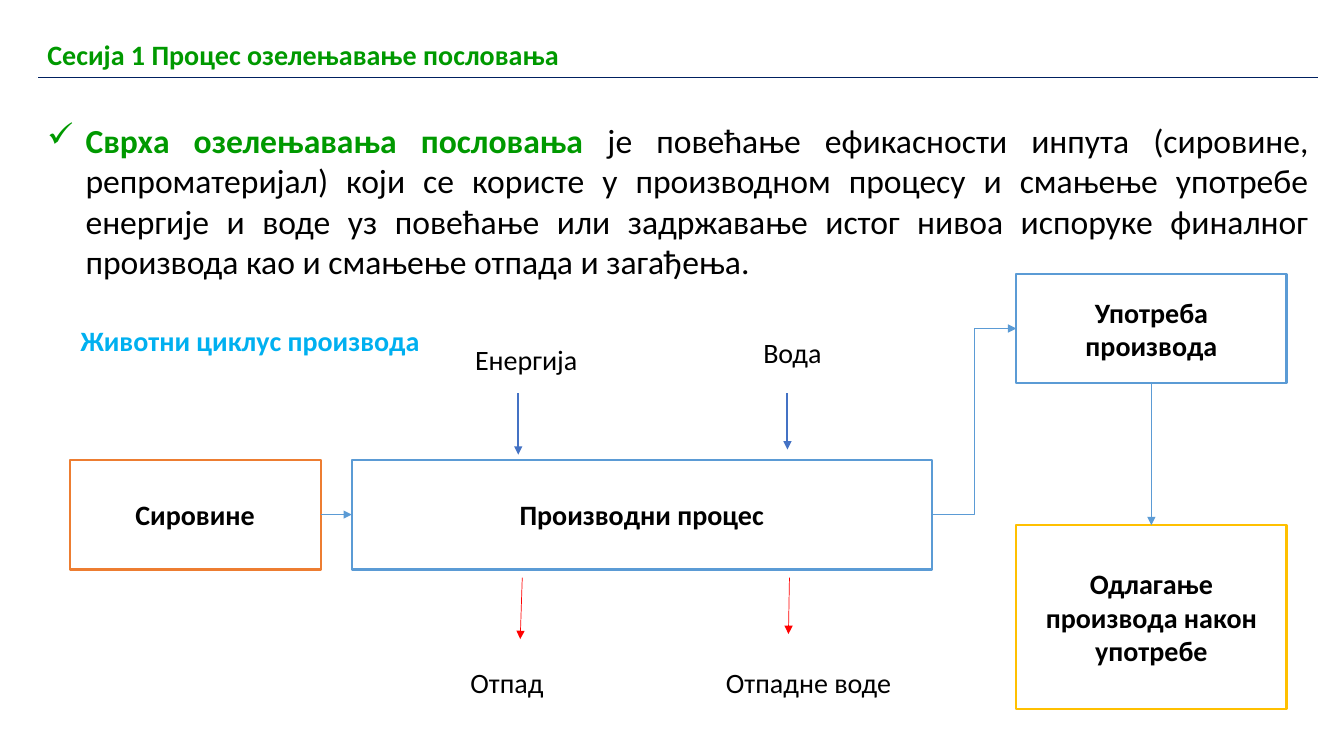
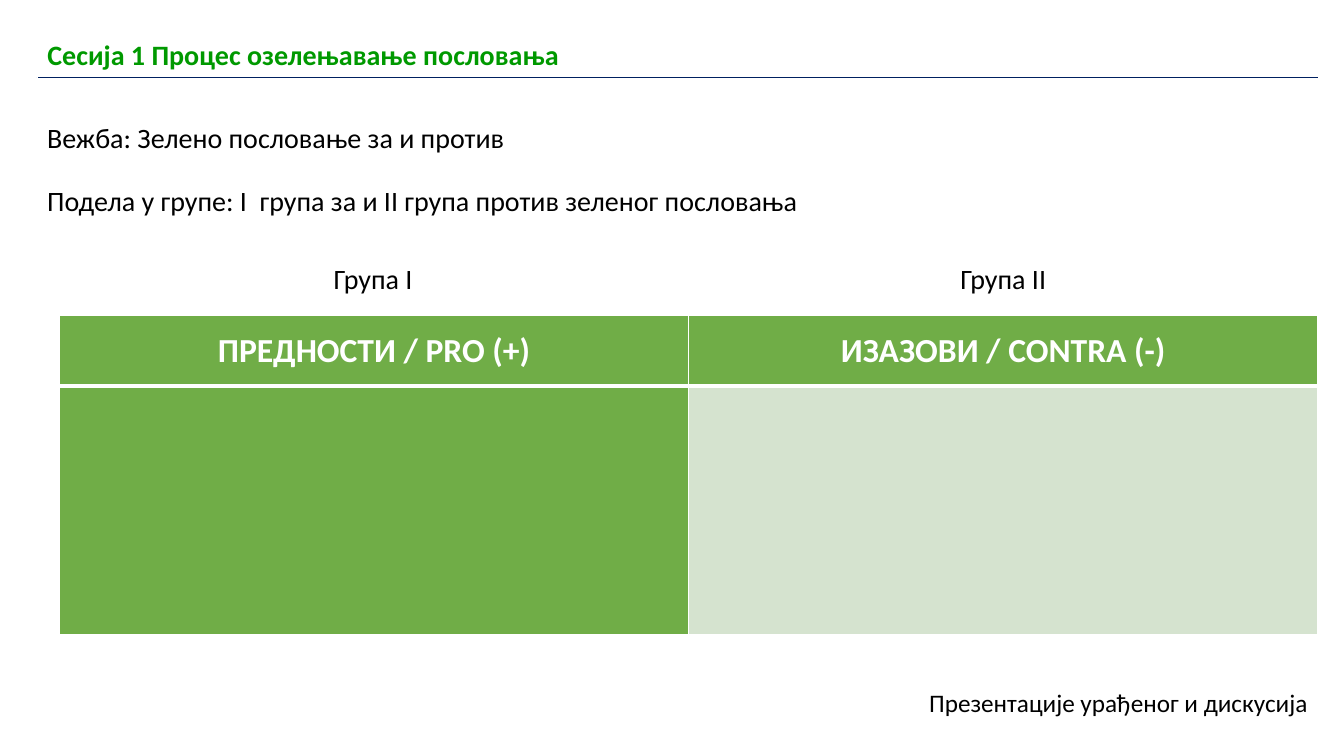
from dataclasses import dataclass

from lxml.etree import SubElement
from pptx import Presentation
from pptx.dml.color import RGBColor
from pptx.enum.shapes import MSO_CONNECTOR as Connector, MSO_SHAPE as Preset
from pptx.enum.text import MSO_ANCHOR as Anchor, PP_ALIGN as Align
from pptx.oxml.ns import qn
from pptx.util import Inches, Pt


@dataclass(frozen=True)
class Theme:
    font: str = "Calibri"
    small: int = 18
    normal: int = 20
    large: int = 24
    black: str = "000000"
    white: str = "FFFFFF"
    green: str = "009900"
    navy: str = "002060"
    sky: str = "00B0F0"
    blue: str = "5B9BD5"
    deep_blue: str = "4472C4"
    orange: str = "ED7D31"
    gold: str = "FFC000"
    red: str = "FF0000"
    leaf: str = "70AD47"
    pale_leaf: str = "D5E3CF"


THEME = Theme()
TITLE = "Сесија 1 Процес озелењавање пословања"


def color(value):
    return RGBColor.from_string(value)


class SlideBuilder:
    def __init__(self, deck, theme):
        self.deck = deck
        self.theme = theme
        self.page = None

    def new_page(self, title):
        self.page = self.deck.slides.add_slide(self.deck.slide_layouts[6])
        cell = self.table(0.37, 0.33, [12.71], [0.43]).cell(0, 0)
        self.borders(cell, L=1, R=1, T=1)
        self.borders(cell, self.theme.navy, B=1)
        cell.fill.background()
        self.fill_text(cell.text_frame, title, tint=self.theme.green, bold=True)

    def add_run(self, para, text, size=None, tint=None, bold=False):
        span = para.add_run()
        span.text = text
        span.font.name = self.theme.font
        span.font.size = Pt(size or self.theme.normal)
        span.font.bold = bold
        span.font.color.rgb = color(tint or self.theme.black)

    def fill_text(self, frame, text, align=Align.LEFT, **style):
        para = frame.paragraphs[0]
        para.alignment = align
        self.add_run(para, text, **style)

    def text_frame(self, left, top, width, height, wrap=True):
        box = self.page.shapes.add_textbox(
            Inches(left), Inches(top), Inches(width), Inches(height))
        box.text_frame.word_wrap = wrap
        return box.text_frame

    def text(self, left, top, width, text, height=0.44, wrap=True, **style):
        self.fill_text(self.text_frame(left, top, width, height, wrap), text, **style)

    def check_item(self, left, top, width, height, lead, rest):
        para = self.text_frame(left, top, width, height).paragraphs[0]
        para.alignment = Align.JUSTIFY
        indent = Inches(0.38)
        properties = para._p.get_or_add_pPr()
        properties.set("marL", str(indent))
        properties.set("indent", str(-indent))
        SubElement(properties, qn("a:buChar")).set("char", "✓")
        size = self.theme.large
        self.add_run(para, lead, size, self.theme.green, True)
        self.add_run(para, rest, size)

    def box(self, left, top, width, height, text, outline=None, weight=1.5):
        box = self.page.shapes.add_shape(
            Preset.RECTANGLE,
            Inches(left), Inches(top), Inches(width), Inches(height))
        box.shadow.inherit = False
        box.fill.solid()
        box.fill.fore_color.rgb = color(self.theme.white)
        if outline:
            box.line.color.rgb = color(outline)
            box.line.width = Pt(weight)
        else:
            box.line.fill.background()
        box.text_frame.word_wrap = True
        box.text_frame.vertical_anchor = Anchor.MIDDLE
        self.fill_text(box.text_frame, text, Align.CENTER, bold=bool(outline))
        return box

    def arrow(self, start, end, tint, weight=0.5, kind=Connector.STRAIGHT):
        line = self.page.shapes.add_connector(
            kind, *(Inches(value) for value in (*start, *end)))
        line.line.color.rgb = color(tint)
        line.line.width = Pt(weight)
        SubElement(line.line._get_or_add_ln(), qn("a:tailEnd")).set("type", "triangle")
        SubElement(line._element.spPr, qn("a:effectLst"))
        return line

    def join(self, source, source_side, target, target_side, kind=Connector.STRAIGHT):
        line = self.arrow((0, 0), (1, 1), self.theme.blue, kind=kind)
        line.begin_connect(source, source_side)
        line.end_connect(target, target_side)

    def table(self, left, top, widths, heights):
        frame = self.page.shapes.add_table(
            len(heights), len(widths), Inches(left), Inches(top),
            Inches(sum(widths)), Inches(sum(heights)))
        table = frame.table
        table.first_row = False
        table.horz_banding = False
        for column, width in zip(table.columns, widths):
            column.width = Inches(width)
        for row, height in zip(table.rows, heights):
            row.height = Inches(height)
        return table

    def borders(self, cell, tint=None, **weights):
        properties = cell._tc.get_or_add_tcPr()
        for side, weight in weights.items():
            edge = SubElement(properties, qn("a:ln" + side))
            edge.set("w", str(Pt(weight)))
            fill = SubElement(edge, qn("a:solidFill"))
            SubElement(fill, qn("a:srgbClr")).set("val", tint or self.theme.white)

    def comparison(self, left, top, widths, heights, headings, fills):
        table = self.table(left, top, widths, heights)
        for row, tints in enumerate(fills):
            for column, tint in enumerate(tints):
                cell = table.cell(row, column)
                top_weight, bottom_weight = (1, 3) if row == 0 else (3, 1)
                self.borders(cell, L=1, R=1, T=top_weight, B=bottom_weight)
                cell.fill.solid()
                cell.fill.fore_color.rgb = color(tint)
        for column, heading in enumerate(headings):
            cell = table.cell(0, column)
            cell.vertical_anchor = Anchor.MIDDLE
            cell.margin_left = cell.margin_right = Inches(0.07)
            cell.margin_top = cell.margin_bottom = 0
            self.fill_text(cell.text_frame, heading, Align.CENTER,
                           size=self.theme.large, tint=self.theme.white, bold=True)


def life_cycle(builder):
    theme = builder.theme
    builder.new_page(TITLE)
    builder.check_item(
        0.37, 1.14, 12.71, 1.72, "Сврха озелењавања пословања ",
        "је повећање ефикасности инпута (сировине, репроматеријал) који се "
        "користе у производном процесу и смањење употребе енергије и воде уз "
        "повећање или задржавање истог нивоа испоруке финалног производа као "
        "и смањење отпада и загађења.")
    process = builder.box(3.49, 4.56, 5.75, 1.09, "Производни процес", theme.blue)
    materials = builder.box(0.69, 4.56, 2.49, 1.09, "Сировине", theme.orange)
    usage = builder.box(10.08, 2.72, 2.68, 1.08, "Употреба производа", theme.blue)
    disposal = builder.box(
        10.08, 5.21, 2.68, 1.82, "Одлагање производа након употребе", theme.gold)
    for left, top, text in (
        (3.82, 3.22, "Енергија"),
        (6.46, 3.16, "Вода"),
        (3.66, 6.43, "Отпад "),
        (6.62, 6.43, "Отпадне воде"),
    ):
        builder.box(left, top, 2.8, 0.68, text)
    builder.join(materials, 3, process, 1)
    builder.join(process, 3, usage, 1, Connector.ELBOW)
    builder.join(usage, 2, disposal, 0)
    for start, end, tint, weight in (
        ((5.14, 3.9), (5.14, 4.51), theme.deep_blue, 1.5),
        ((7.81, 3.9), (7.81, 4.46), theme.deep_blue, 1.5),
        ((5.18, 5.73), (5.16, 6.34), theme.red, 0.5),
        ((7.83, 5.73), (7.82, 6.29), theme.red, 0.5),
    ):
        builder.arrow(start, end, tint, weight)
    builder.text(0.7, 3.16, 3.58, "Животни циклус производа",
                 wrap=False, tint=theme.sky, bold=True)


def group_exercise(builder):
    theme = builder.theme
    builder.new_page(TITLE)
    builder.comparison(
        0.59, 3.13, [6.24, 6.24], [0.7, 2.47],
        ["ПРЕДНОСТИ / PRO (+)", "ИЗАЗОВИ / CONTRA (-)"],
        [[theme.leaf, theme.leaf], [theme.leaf, theme.pale_leaf]])
    builder.text(0.37, 1.15, 6.66, "Вежба: Зелено пословање за и против")
    builder.text(0.37, 1.77, 8.1,
                 "Подела у групе: I  група за и II група против зеленог пословања")
    for left, group in ((0.59, "Група I"), (6.84, "Група II")):
        builder.text(left, 2.55, 6.22, group, align=Align.CENTER)
    builder.text(6.41, 6.77, 6.66, "Презентације урађеног и дискусија",
                 height=0.4, align=Align.RIGHT, size=theme.small)


def main():
    deck = Presentation()
    deck.slide_width = Inches(13.33)
    deck.slide_height = Inches(7.5)
    builder = SlideBuilder(deck, THEME)
    life_cycle(builder)
    group_exercise(builder)
    deck.save("out.pptx")


if __name__ == "__main__":
    main()
